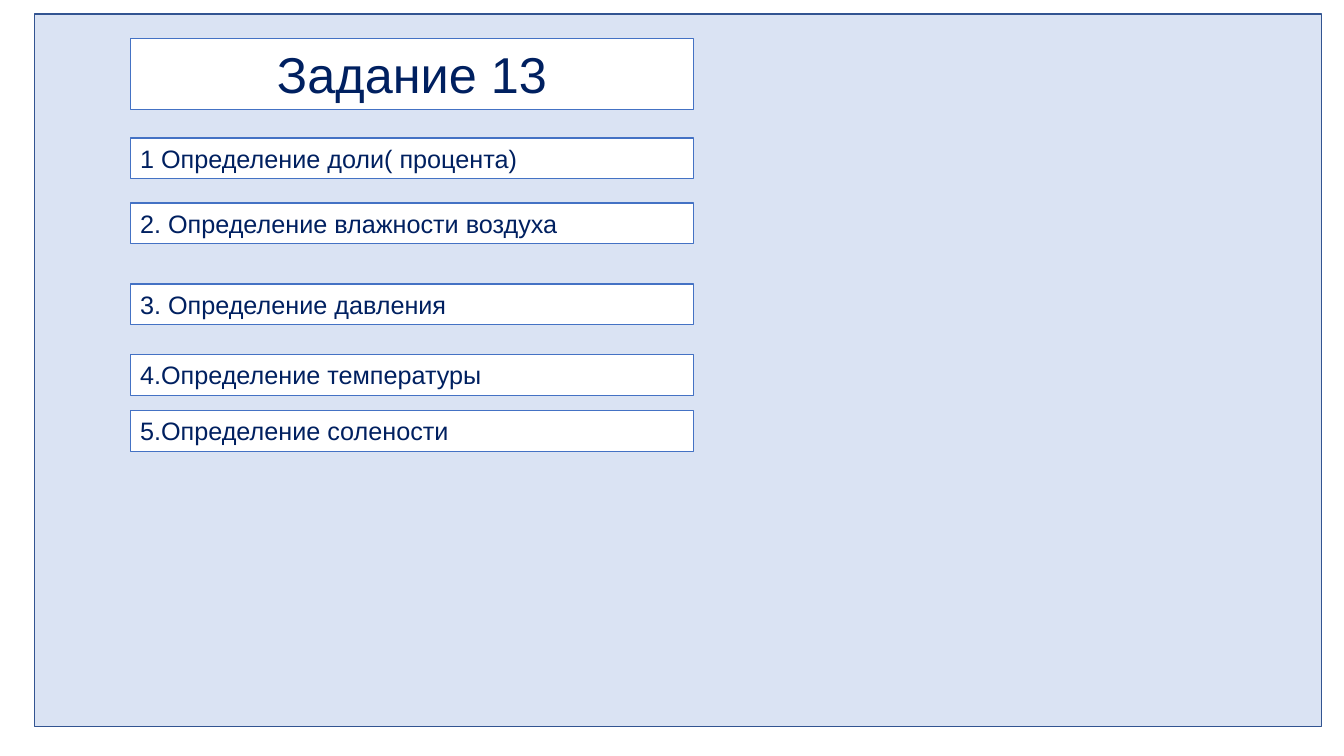
import pptx
import pptx.util
import pptx.dml.color
import pptx.enum.shapes
import pptx.enum.text

Pt = pptx.util.Pt
COLOURS = {"panel": "DAE3F3", "panel line": "325491", "box": "FFFFFF",
           "box line": "4472C4", "text": "002060"}
TOPICS = [
    (0, "1 Определение доли( процента)"),
    (46.3, "2. Определение влажности воздуха"),
    (104.4, "3. Определение давления"),
    (154.8, "4.Определение температуры"),
    (194.8, "5.Определение солености"),
]


def colour(name):
    return pptx.dml.color.RGBColor.from_string(COLOURS[name])


def paint(shape, name):
    shape.fill.solid()
    shape.fill.fore_color.rgb = colour(name)
    shape.line.color.rgb = colour(name + " line")
    shape.line.width = Pt(1)


def write(shape, text, size, alignment):
    frame = shape.text_frame
    frame.text = text
    frame.word_wrap = True
    frame.auto_size = pptx.enum.text.MSO_AUTO_SIZE.NONE
    frame.vertical_anchor = pptx.enum.text.MSO_ANCHOR.TOP
    para = frame.paragraphs[0]
    para.alignment = alignment
    para.font.name = "Arial"
    para.font.size = Pt(size)
    para.font.color.rgb = colour("text")


def add_panel(page, left, top, width, height):
    panel = page.shapes.add_shape(pptx.enum.shapes.MSO_SHAPE.RECTANGLE,
                                  Pt(left), Pt(top), Pt(width), Pt(height))
    panel.shadow.inherit = False
    paint(panel, "panel")
    page.shapes.title.element.addprevious(panel.element)


def add_heading(page, left, top, width, height):
    title = page.shapes.title
    title.left, title.top = Pt(left), Pt(top)
    title.width, title.height = Pt(width), Pt(height)
    paint(title, "box")
    write(title, "Задание 13", 36, pptx.enum.text.PP_ALIGN.CENTER)


def add_topics(page, left, top, width, row_height):
    for offset, text in TOPICS:
        box = page.shapes.add_textbox(Pt(left), Pt(top + offset),
                                      Pt(width), Pt(row_height))
        paint(box, "box")
        write(box, text, 18, pptx.enum.text.PP_ALIGN.LEFT)


def main():
    deck = pptx.Presentation()
    deck.slide_width, deck.slide_height = Pt(960), Pt(540)
    page = deck.slides.add_slide(deck.slide_layouts.get_by_name("Title Only"))
    add_panel(page, 24.5, 10, 919.5, 509)
    add_heading(page, 93, 27.4, 402.5, 51)
    add_topics(page, 93, 98.6, 402.5, 29)
    deck.save("out.pptx")


if __name__ == "__main__":
    main()
